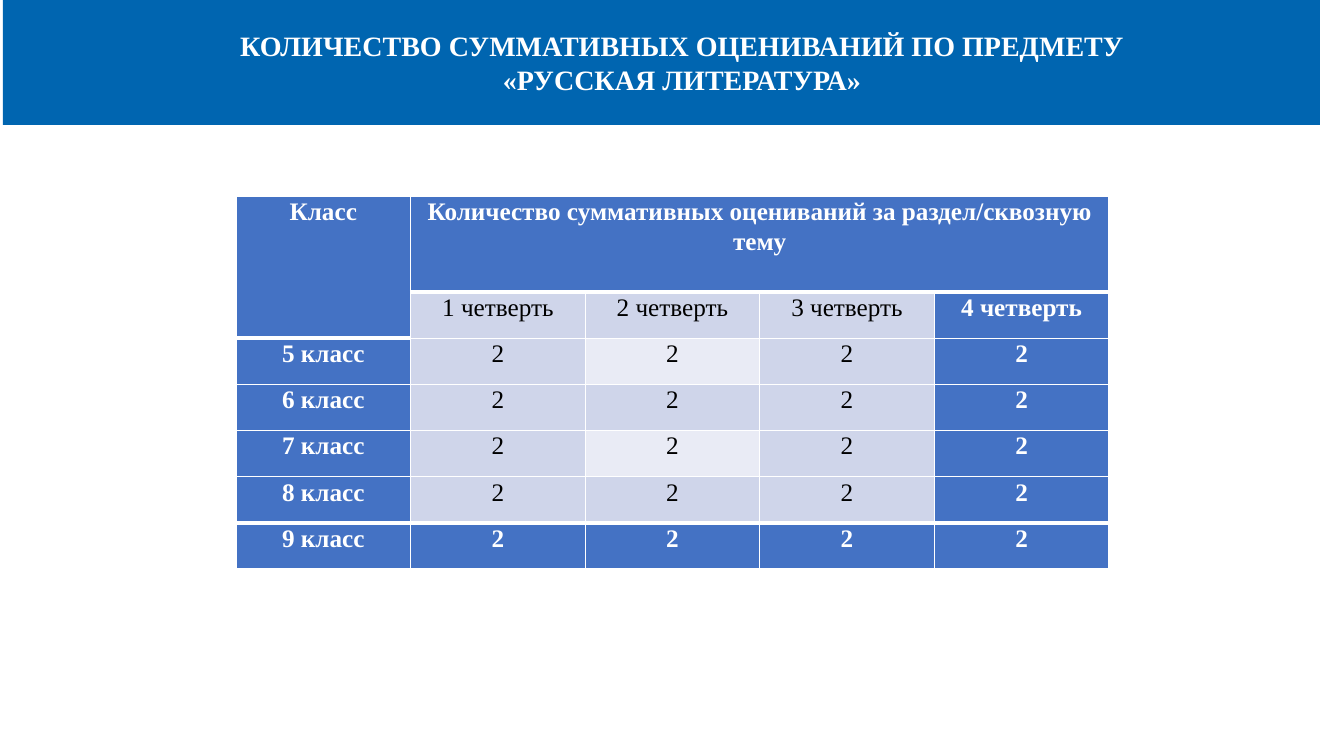
from lxml.etree import SubElement
from pptx import Presentation
from pptx.dml.color import RGBColor
from pptx.enum.shapes import MSO_SHAPE
from pptx.enum.text import MSO_ANCHOR, MSO_AUTO_SIZE, PP_ALIGN
from pptx.oxml.ns import qn
from pptx.util import Emu, Pt

# Content
TITLE = ["КОЛИЧЕСТВО СУММАТИВНЫХ ОЦЕНИВАНИЙ ПО ПРЕДМЕТУ ",
         "«РУССКАЯ ЛИТЕРАТУРА» "]
HEAD = ["Класс", "Количество суммативных оцениваний за раздел/сквозную тему"]
TERMS = ["1 четверть", "2 четверть", "3 четверть", "4 четверть"]
COUNTS = {"5 класс": [2, 2, 2, 2], "6 класс": [2, 2, 2, 2],
          "7 класс": [2, 2, 2, 2], "8 класс": [2, 2, 2, 2],
          "9 класс": [2, 2, 2, 2]}
ROWS = [HEAD + [""] * 3, [""] + TERMS]
ROWS += [[grade, *nums] for grade, nums in COUNTS.items()]

# Colours
WHITE = RGBColor(0xFF, 0xFF, 0xFF)
BLACK = RGBColor(0x00, 0x00, 0x00)
BANNER = RGBColor(0x00, 0x65, 0xB0)
BLUE = RGBColor(0x44, 0x72, 0xC4)
LIGHT = RGBColor(0xCF, 0xD5, 0xEA)
PALE = RGBColor(0xE9, 0xEB, 0xF5)

# Sizes in pixels
SCALE = 914400 / 100.8
SLIDE = (1344, 756)
BAND = (3, 0, 1317, 125)
TITLE_BOX = (39, 23, 1244, 78)
GRID = (236, 196, 873, 373)
TOP_ROW = 96


def px(num):
    return Emu(round(num * SCALE))


def write(para, text, size, color, bold, indent):
    para.alignment = PP_ALIGN.CENTER
    props = para._p.get_or_add_pPr()
    props.set("marL", "0")
    props.set("indent", str(px(indent)))
    run = para.add_run()
    run.text = text
    look = {"name": "Times New Roman", "size": Pt(size), "bold": bold}
    for key, val in look.items():
        setattr(run.font, key, val)
    run.font.color.rgb = color


def edge(cell, side, width):
    props = cell._tc.get_or_add_tcPr()
    line = SubElement(props, qn("a:ln" + side), w=str(Pt(width)))
    fill = SubElement(line, qn("a:solidFill"))
    SubElement(fill, qn("a:srgbClr"), val=str(WHITE))


deck = Presentation()
deck.slide_width, deck.slide_height = map(px, SLIDE)
slide = deck.slides.add_slide(deck.slide_layouts[6])

# Banner
band = slide.shapes.add_shape(MSO_SHAPE.RECTANGLE, *map(px, BAND))
band.shadow.inherit = False
band.fill.solid()
band.fill.fore_color.rgb = BANNER
band.line.fill.background()

# Table
last, end = len(ROWS) - 1, len(TERMS)
frame = slide.shapes.add_table(len(ROWS), end + 1, *map(px, GRID))
table = frame.table
for key in ("first_row", "horz_banding"):
    setattr(table, key, False)
for col in table.columns:
    col.width = px(GRID[2] / (end + 1))
for r, row in enumerate(table.rows):
    row.height = px((GRID[3] - TOP_ROW) / last if r else TOP_ROW)


def rule(r, c):
    """Width of the line above row r."""
    return 3 if r == last or r == (1 if c else 2) else 1


CELL = {"margin_left": 0, "margin_right": 0,
        "margin_top": 0, "margin_bottom": 0}
for r, row in enumerate(ROWS):
    for c, text in enumerate(row):
        cell = table.cell(r, c)
        for key, val in CELL.items():
            setattr(cell, key, val)
        sides = {"L": 1, "R": 1, "T": rule(r, c), "B": rule(r + 1, c)}
        for side, width in sides.items():
            edge(cell, side, width)
        strong = r in (0, last) or c in (0, end)
        pale = c == 2 and r in (2, 4)
        cell.fill.solid()
        cell.fill.fore_color.rgb = BLUE if strong else PALE if pale else LIGHT
        if text != "":
            para = cell.text_frame.paragraphs[0]
            para.line_spacing = 1.07
            write(para, str(text), 18, WHITE if strong else BLACK, strong, -1)
table.cell(0, 0).merge(table.cell(1, 0))
table.cell(0, 1).merge(table.cell(0, end))

# Title
body = slide.shapes.add_textbox(*map(px, TITLE_BOX)).text_frame
FRAME = {"word_wrap": True, "vertical_anchor": MSO_ANCHOR.MIDDLE,
         "auto_size": MSO_AUTO_SIZE.SHAPE_TO_FIT_TEXT}
for key, val in FRAME.items():
    setattr(body, key, val)
for i, text in enumerate(TITLE):
    para = body.add_paragraph() if i else body.paragraphs[0]
    write(para, text, 20, WHITE, True, 49)

deck.save("out.pptx")
